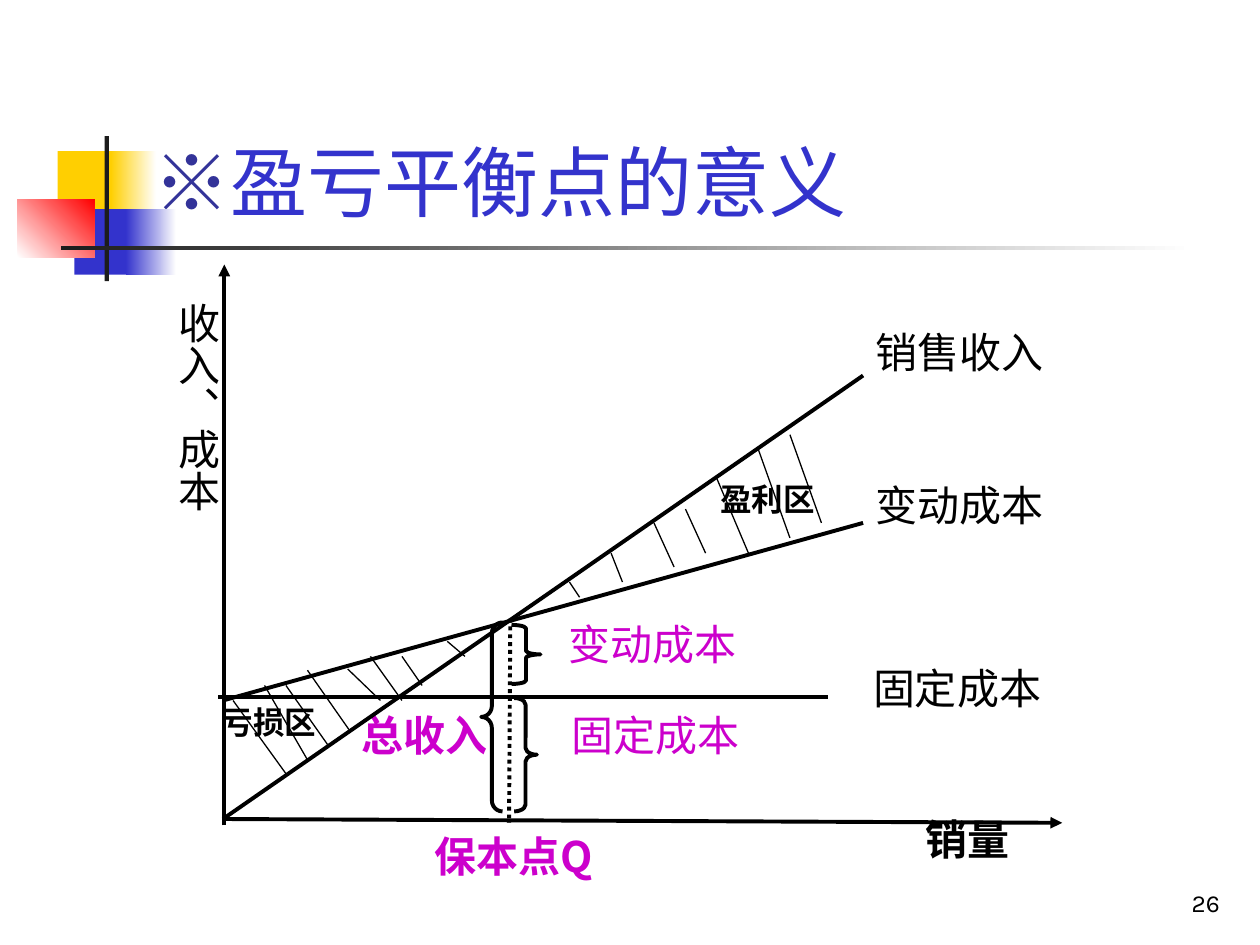
from pptx import Presentation
from pptx.dml.color import RGBColor
from pptx.enum import dml, shapes, text
from pptx.oxml import ns, xmlchemy
from pptx.util import Pt

COLORS = {
    "yellow": "FFCF01", "blue": "3333CC", "red": "FF0000", "white": "FFFFFF",
    "dark": "1C1C1C", "navy": "333399", "black": "000000", "magenta": "CC00CC",
}
LATIN, CHINESE = "Karla", "Noto Sans CJK SC"

DECORATIONS = [
    (33, 86.4, 34.6, 37.4, ("yellow",), 0),
    (63.4, 86.4, 25.9, 37.4, ("yellow", "white"), 0),
    (42.5, 119.5, 33.1, 37.4, ("blue",), 0),
    (72, 119.5, 28.8, 37.4, ("blue", "white"), 0),
    (10, 113.8, 43.9, 33.1, ("white", "red"), 45),
    (59.8, 77.8, 2.4, 82.8, ("dark",), 0),
    (34.6, 140.4, 648, 2.4, ("dark", "white"), 0),
]
AREA_LABELS = [
    ("盈利区", 404.6, 270.7, 90),
    ("亏损区", 119.5, 398.2, 102.2),
]
LINE_LABELS = [
    ("销售收入", 493.2, 182.9, 131.8, "black", False, LATIN),
    ("变动成本", 493.2, 270.7, 126, "black", False, LATIN),
    ("固定成本", 491.8, 375.1, 120.2, "black", False, LATIN),
    ("变动成本", 317.5, 349.9, 113.8, "magenta", False, LATIN),
    ("固定成本", 319.7, 401.8, 120.2, "magenta", False, LATIN),
    ("总收入", 199.4, 401.8, 95.8, "magenta", True, LATIN),
    ("保本点Q", 241.2, 470.9, 126, "magenta", True, CHINESE),
    ("销量", 522, 461.5, 95.8, "black", True, LATIN),
]
AXES = [
    (127.4, 468, 607, 470.2),
    (128.2, 471.6, 128.2, 151.2),
]
COST_AND_REVENUE_LINES = [
    (124.6, 398.2, 473, 398.2),
    (127.4, 400.3, 493.2, 298.8),
    (127.4, 468, 493.2, 214.6),
]
PROFIT_HATCHES = [
    (451.4, 248.4, 469.4, 298.8), (433.4, 257, 451.4, 307.4),
    (409.7, 273.6, 427.7, 316.1), (391.7, 290.9, 403.2, 316.1),
    (373.7, 298.8, 385.2, 324), (349.2, 316.1, 355.7, 332.6),
    (325.4, 332.6, 331.2, 341.3),
]
LOSS_HATCHES = [
    (255.6, 366.5, 265.7, 375.1), (229.7, 375.1, 241.2, 391.7),
    (211.7, 375.1, 229.7, 400.3), (198.7, 382.3, 217.4, 400.3),
    (175.7, 383, 199.4, 416.9), (163.4, 391.7, 187.2, 425.5),
    (151.2, 391.7, 175.7, 434.2), (133.2, 400.3, 163.4, 442.1),
]
BRACES = [
    (shapes.MSO_SHAPE.RIGHT_BRACE, 292.3, 357.1, 16.6, 33.8, 0.123),
    (shapes.MSO_SHAPE.RIGHT_BRACE, 293.8, 398.9, 13, 64.8, 0.298),
    (shapes.MSO_SHAPE.LEFT_BRACE, 275, 355.7, 12.2, 108, 0.512),
]


def color(name):
    return RGBColor.from_string(COLORS[name])


def add_child(parent, tag, **attributes):
    child = xmlchemy.OxmlElement(tag)
    for key, value in attributes.items():
        child.set(key, value)
    parent.append(child)


def style_font(font, size, color_name, name=LATIN, bold=False):
    font.size = Pt(size)
    font.bold = bold
    font.color.rgb = color(color_name)
    font.name = name


def add_decoration(slide, left, top, width, height, names, angle):
    shape = slide.shapes.add_shape(
        shapes.MSO_SHAPE.RECTANGLE, Pt(left), Pt(top), Pt(width), Pt(height))
    shape.shadow.inherit = False
    shape.line.fill.background()
    if len(names) == 1:
        shape.fill.solid()
        shape.fill.fore_color.rgb = color(names[0])
        return
    shape.fill.gradient()
    shape.fill.gradient_angle = angle
    for stop, name in zip(shape.fill.gradient_stops, names):
        stop.color.rgb = color(name)


def add_label(slide, words, left, top, width, height, size,
              color_name="black", bold=False, name=LATIN):
    shape = slide.shapes.add_textbox(Pt(left), Pt(top), Pt(width), Pt(height))
    frame = shape.text_frame
    frame.word_wrap = True
    frame.text = words
    style_font(frame.paragraphs[0].font, size, color_name, name, bold)
    return frame


def add_line(slide, x1, y1, x2, y2, width=2.25, arrow=False, dash=None):
    connector = slide.shapes.add_connector(
        shapes.MSO_CONNECTOR.STRAIGHT, Pt(x1), Pt(y1), Pt(x2), Pt(y2))
    connector.line.width = Pt(width)
    connector.line.color.rgb = color("black")
    if dash:
        connector.line.dash_style = dash
    properties = connector._element.spPr
    if arrow:
        add_child(properties.find(ns.qn("a:ln")), "a:tailEnd", type="triangle")
    add_child(properties, "a:effectLst")


def add_brace(slide, kind, left, top, width, height, curve):
    shape = slide.shapes.add_shape(kind, Pt(left), Pt(top), Pt(width), Pt(height))
    shape.shadow.inherit = False
    shape.fill.background()
    shape.line.color.rgb = color("black")
    shape.line.width = Pt(2.25)
    shape.adjustments[0] = curve
    shape.adjustments[1] = 0.5


def fill_title(slide):
    title = slide.shapes.title
    title.left, title.top, title.width, title.height = (
        Pt(70.6), Pt(43.2), Pt(619.9), Pt(90))
    frame = title.text_frame
    frame.auto_size = text.MSO_AUTO_SIZE.NONE
    frame.vertical_anchor = text.MSO_ANCHOR.BOTTOM
    paragraph = frame.paragraphs[0]
    paragraph.alignment = text.PP_ALIGN.LEFT
    for words, color_name, name in [(" ※", "navy", LATIN),
                                    ("盈亏平衡点的意义", "blue", CHINESE)]:
        run = paragraph.add_run()
        run.text = words
        style_font(run.font, 44, color_name, name)


def add_page_number(slide):
    frame = add_label(slide, "26", 554.4, 491.8, 149.8, 36, 14)
    frame.vertical_anchor = text.MSO_ANCHOR.BOTTOM
    frame.paragraphs[0].alignment = text.PP_ALIGN.RIGHT


def add_chart_labels(slide):
    for words, left, top, width in AREA_LABELS:
        add_label(slide, words, left, top, width, 28.8, 18, bold=True)
    for words, left, top, width, color_name, bold, name in LINE_LABELS:
        add_label(slide, words, left, top, width, 36, 24, color_name, bold, name)
    frame = add_label(slide, "收入、成本", 87.8, 165.6, 43.2, 211, 24)
    frame._txBody.bodyPr.set("vert", "eaVert")


def add_chart_lines(slide):
    add_line(slide, 291.6, 353.5, 290.9, 470.2,
             dash=dml.MSO_LINE.ROUND_DOT)
    for points in COST_AND_REVENUE_LINES:
        add_line(slide, *points)
    for points in AXES:
        add_line(slide, *points, arrow=True)
    for points in PROFIT_HATCHES + LOSS_HATCHES:
        add_line(slide, *points, width=0.75)


def main():
    presentation = Presentation()
    presentation.slide_width, presentation.slide_height = Pt(720), Pt(540)
    slide = presentation.slides.add_slide(presentation.slide_layouts[5])
    for decoration in DECORATIONS:
        add_decoration(slide, *decoration)
    fill_title(slide)
    add_page_number(slide)
    add_chart_labels(slide)
    add_chart_lines(slide)
    for brace in BRACES:
        add_brace(slide, *brace)
    presentation.save("out.pptx")


if __name__ == "__main__":
    main()
